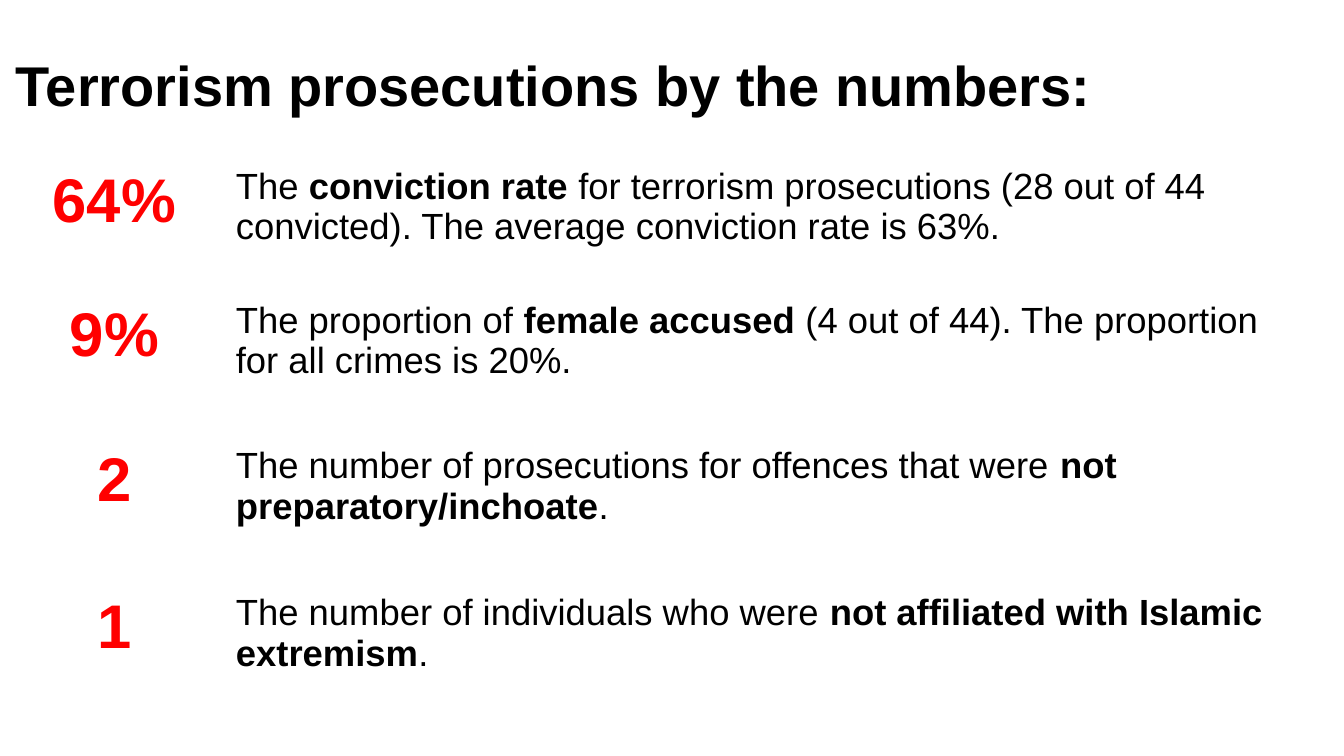
from pptx import Presentation
from pptx.dml.color import RGBColor
from pptx.enum.text import MSO_ANCHOR, PP_ALIGN
from pptx.util import Inches, Pt

WIDE, HIGH = 13.33, 7.5
RED, BLACK = "FF0000", "000000"
TITLE = "Terrorism prosecutions by the numbers:"
FACTS = [
    ("64%", "The ", "conviction rate ",
     "for terrorism prosecutions (28 out of 44 convicted). "
     "The average conviction rate is 63%."),
    ("9%", "The proportion of ", "female accused ",
     "(4 out of 44). The proportion for all crimes is 20%."),
    ("2", "The number of prosecutions for offences that were ",
     "not preparatory/inchoate", "."),
    ("1", "The number of individuals who were ",
     "not affiliated with Islamic extremism", "."),
]


def color(code):
    return RGBColor.from_string(code)


def across(share):
    return Inches(WIDE * share / 100)


def down(share):
    return Inches(HIGH * share / 100)


class Deck:
    face = "Arial"

    def __init__(self):
        self.file = Presentation()
        self.file.slide_width = Inches(WIDE)
        self.file.slide_height = Inches(HIGH)
        self.slide = self.file.slides.add_slide(self.file.slide_layouts[6])

    def style(self, para, size, code, bold=None):
        font = para.font
        font.name, font.size, font.bold = self.face, Pt(size), bold
        font.color.rgb = color(code)

    def title(self, text, left, top, width, height):
        box = self.slide.shapes.add_textbox(
            across(left), down(top), across(width), down(height))
        frame = box.text_frame
        frame.word_wrap = True
        frame.vertical_anchor = MSO_ANCHOR.MIDDLE
        para = frame.paragraphs[0]
        para.text = text
        para.line_spacing = 0.9
        self.style(para, 40, BLACK, True)

    def cell(self, cell):
        cell.fill.background()
        cell.margin_left = cell.margin_right = Inches(0.07)
        cell.margin_top = cell.margin_bottom = 0
        return cell.text_frame.paragraphs[0]

    def table(self, facts, left, top, widths, heights):
        table = self.slide.shapes.add_table(
            len(facts), len(widths), across(left), down(top),
            across(sum(widths)), down(sum(heights))).table
        table.first_row = table.horz_banding = False
        for column, width in zip(table.columns, widths):
            column.width = across(width)
        for row, height, (figure, *parts) in zip(table.rows, heights, facts):
            row.height = down(height)
            number, detail = map(self.cell, row.cells)
            number.text = figure
            number.alignment = PP_ALIGN.CENTER
            self.style(number, 44, RED, True)
            self.style(detail, 26, BLACK)
            for part, bold in zip(parts, (False, True, False)):
                run = detail.add_run()
                run.text, run.font.bold = part, bold


def main():
    deck = Deck()
    deck.table(FACTS, 0, 22, (17.03, 80.87), (17.73, 19.2, 19.47, 17.07))
    deck.title(TITLE, 0.45, 2, 94, 19.33)
    deck.file.save("out.pptx")


if __name__ == "__main__":
    main()
